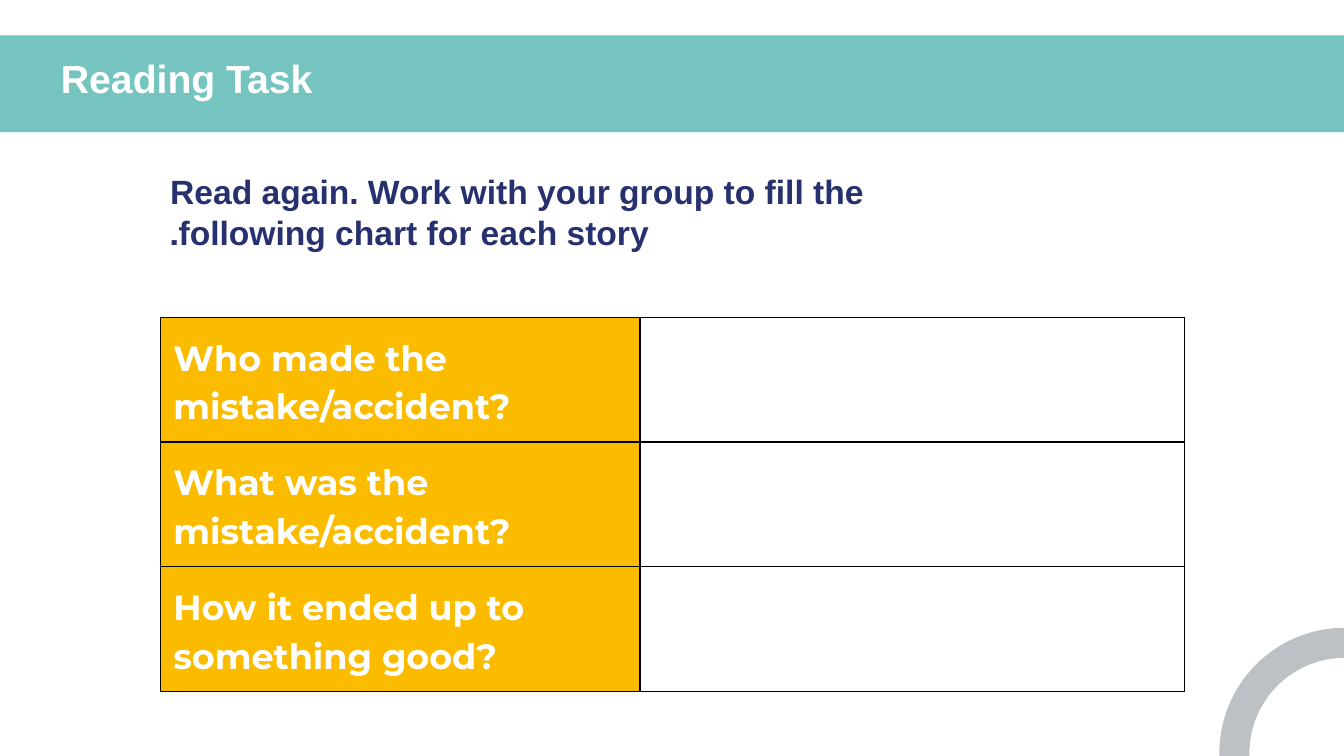
from dataclasses import dataclass

from lxml.etree import SubElement
from pptx import Presentation
from pptx.dml.color import RGBColor
from pptx.enum.shapes import MSO_SHAPE as Kind
from pptx.enum.text import MSO_ANCHOR as Anchor
from pptx.enum.text import MSO_AUTO_SIZE as Fit
from pptx.enum.text import PP_ALIGN as Align
from pptx.oxml.ns import qn
from pptx.util import Cm, Pt

WHITE, NAVY, TEAL = "FFFFFF", "27316F", "75C4C0"
GOLD, GREY, BLACK = "FBBC00", "BDC1C6", "000000"


@dataclass
class Box:
    left: float
    top: float
    width: float
    height: float

    def cm(self) -> list:
        return [Cm(v) for v in (self.left, self.top, self.width, self.height)]


@dataclass
class Decor:
    kind: Kind
    box: Box
    fill: str
    adjust: tuple = ()


@dataclass
class Label:
    text: str
    size: int
    color: str
    align: Align


def rgb(code: str) -> RGBColor:
    return RGBColor.from_string(code)


def style(para, face: str, size: int, color: str) -> None:
    font = para.font
    font.name, font.size, font.bold = face, Pt(size), True
    font.color.rgb = rgb(color)


def draw(slide, decor: Decor) -> None:
    shape = slide.shapes.add_shape(decor.kind, *decor.box.cm())
    shape.shadow.inherit = False
    shape.fill.solid()
    shape.fill.fore_color.rgb = rgb(decor.fill)
    shape.line.fill.background()
    for i, value in enumerate(decor.adjust):
        shape.adjustments[i] = value


def write(frame, label: Label) -> None:
    """Set one right-to-left paragraph."""
    frame.word_wrap = True
    frame.auto_size = Fit.SHAPE_TO_FIT_TEXT
    frame.vertical_anchor = Anchor.TOP
    frame.text = label.text
    para = frame.paragraphs[0]
    para.alignment = label.align
    para._p.get_or_add_pPr().set("rtl", "1")
    style(para, "Arial", label.size, label.color)


def outline(cell) -> None:
    props = cell._tc.get_or_add_tcPr()
    for i, side in enumerate(("lnL", "lnR", "lnT", "lnB")):
        line = props.makeelement(qn(f"a:{side}"), {"w": str(Pt(1))})
        fill = SubElement(line, qn("a:solidFill"))
        SubElement(fill, qn("a:srgbClr"), val=BLACK)
        props.insert(i, line)


def ask(cell, text: str) -> None:
    cell.fill.solid()
    cell.fill.fore_color.rgb = rgb(GOLD)
    cell.vertical_anchor = Anchor.MIDDLE
    cell.margin_left = cell.margin_right = Cm(0.33)
    cell.margin_top = cell.margin_bottom = Cm(0.33)
    cell.text = text
    para = cell.text_frame.paragraphs[0]
    para.line_spacing = 1.15
    style(para, "Montserrat", 25, WHITE)


DECOR = (
    Decor(Kind.RECTANGLE, Box(-0.58, 0.89, 35, 2.44), TEAL),
    Decor(Kind.BLOCK_ARC, Box(30.73, 15.82, 6.32, 6.32), GREY,
          (106.77, 163.22, 0.12)),
)
TITLE = Label("Reading Task", 28, WHITE, Align.RIGHT)
TASK = Label("Read again. Work with your group to fill the following chart "
             "for each story.", 24, NAVY, Align.LEFT)
ASKS = (
    "Who made the mistake/accident?",
    "What was the mistake/accident?",
    "How it ended up to something good?",
)
COLS = (12.09, 13.72)
ROW = 3.14


def main() -> None:
    deck = Presentation()
    deck.slide_width, deck.slide_height = Cm(33.87), Cm(19.05)
    slide = deck.slides.add_slide(deck.slide_layouts[5])
    shapes = slide.shapes

    # Band and corner ring
    for decor in DECOR:
        draw(slide, decor)

    # Question table
    box = Box(4.04, 8, sum(COLS), ROW * len(ASKS))
    table = shapes.add_table(len(ASKS), len(COLS), *box.cm()).table
    table.first_row = table.horz_banding = False
    for col, width in zip(table.columns, COLS):
        col.width = Cm(width)
    for row, text in zip(table.rows, ASKS):
        row.height = Cm(ROW)
        left, right = row.cells
        ask(left, text)
        right.fill.background()
        outline(left)
        outline(right)

    # Task text
    task = shapes.add_textbox(*Box(4.04, 4.19, 21.79, 2.31).cm())
    write(task.text_frame, TASK)

    # Title, brought in front of the band
    title = shapes.title
    title.left, title.top, title.width, title.height = Box(
        -3, 1.24, 11.13, 1.45).cm()
    write(title.text_frame, TITLE)
    shapes._spTree.append(title._element)

    deck.save("out.pptx")


if __name__ == "__main__":
    main()
